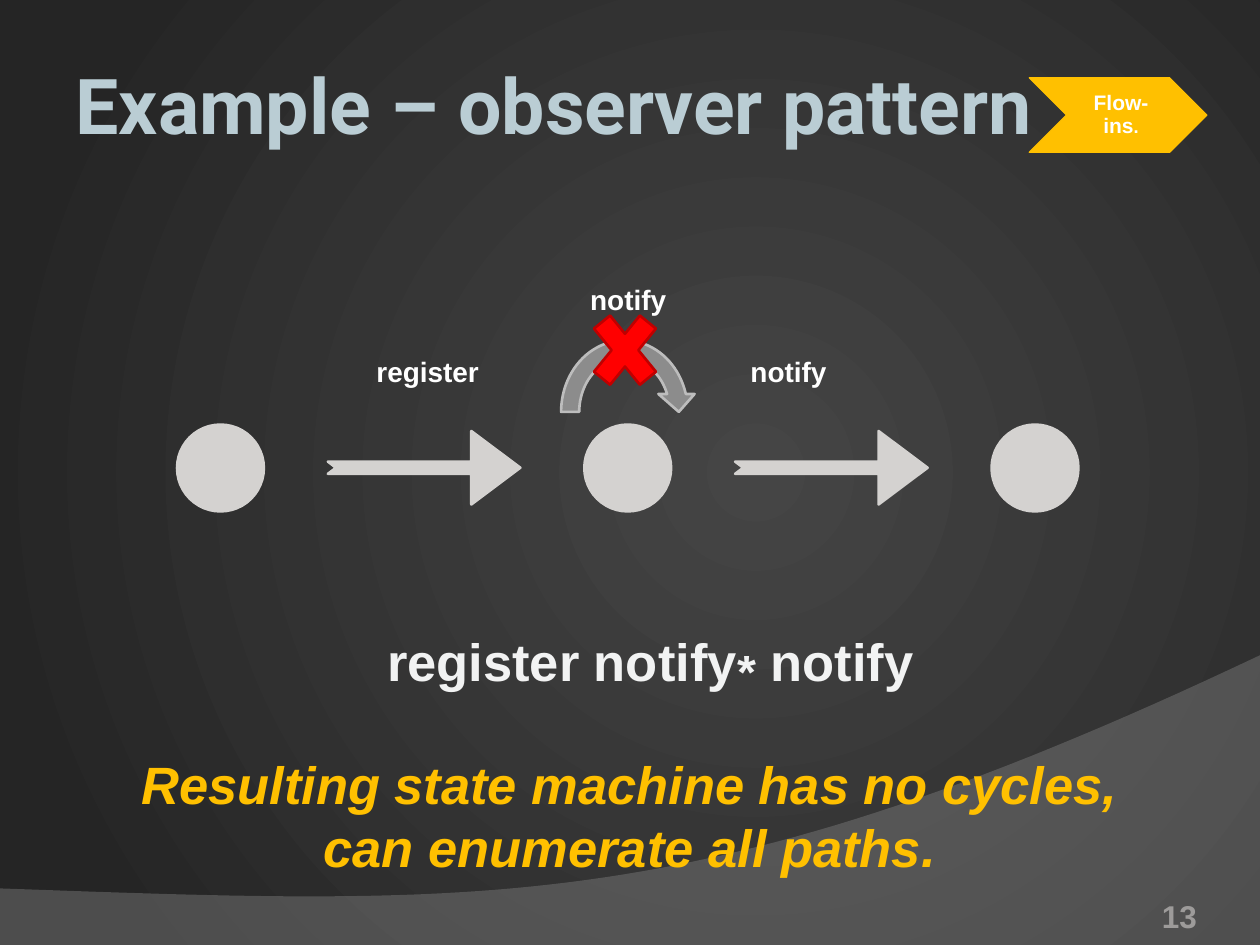
from dataclasses import dataclass

from lxml import etree
from pptx import Presentation
from pptx.dml.color import RGBColor
from pptx.enum.shapes import MSO_SHAPE
from pptx.enum.text import MSO_ANCHOR, MSO_AUTO_SIZE, PP_ALIGN
from pptx.oxml.ns import qn
from pptx.util import Cm, Pt

LEFT, CENTER, RIGHT = PP_ALIGN.LEFT, PP_ALIGN.CENTER, PP_ALIGN.RIGHT
TOP, MIDDLE, BOTTOM = MSO_ANCHOR.TOP, MSO_ANCHOR.MIDDLE, MSO_ANCHOR.BOTTOM
CIRCLE, ARROW = MSO_SHAPE.OVAL, MSO_SHAPE.NOTCHED_RIGHT_ARROW
LOOP, CROSS, CHEVRON = MSO_SHAPE.CIRCULAR_ARROW, MSO_SHAPE.MATH_MULTIPLY, MSO_SHAPE.CHEVRON

WIDTH, HEIGHT = 25.4, 19.05
WHITE, GOLD, STATE_GREY = "FFFFFF", "FFC000", "D4D2D0"
STATE_COUNT, STATE_STEP = 3, 8.21


@dataclass
class Box:
    left: float
    top: float
    width: float
    height: float

    def lengths(self):
        return [Cm(value) for value in (self.left, self.top, self.width, self.height)]


@dataclass
class Label:
    box: Box
    text: str
    size: float = 16
    color: str = WHITE
    align: PP_ALIGN = LEFT
    anchor: MSO_ANCHOR = TOP
    insets: tuple = (0.25, 0.13, 0.25, 0.13)
    italic: bool = False


def rgb(color: str) -> RGBColor:
    return RGBColor.from_string(color)


def set_alpha(element, percent: int) -> None:
    for color in element.iter(qn("a:srgbClr")):
        etree.SubElement(color, qn("a:alpha"), val=str(percent * 1000))


def format_run(run, size: float, color: str, font: str = "Arial", italic: bool = False) -> None:
    run.font.name = font
    run.font.size = Pt(size)
    run.font.bold = True
    run.font.italic = italic
    run.font.color.rgb = rgb(color)


def add_label(slide, label: Label):
    shape = slide.shapes.add_textbox(*label.box.lengths())
    frame = shape.text_frame
    frame.text = label.text
    frame.word_wrap = True
    frame.auto_size = MSO_AUTO_SIZE.NONE
    frame.vertical_anchor = label.anchor
    (frame.margin_left, frame.margin_top,
     frame.margin_right, frame.margin_bottom) = [Cm(inset) for inset in label.insets]
    for paragraph in frame.paragraphs:
        paragraph.alignment = label.align
        for run in paragraph.runs:
            format_run(run, label.size, label.color, italic=label.italic)
    return shape


def add_figure(slide, kind, box: Box, fill: str, line: str, line_width=1.5, adjustments=()):
    shape = slide.shapes.add_shape(kind, *box.lengths())
    shape.shadow.inherit = False
    shape.fill.solid()
    shape.fill.fore_color.rgb = rgb(fill)
    shape.line.color.rgb = rgb(line)
    shape.line.width = Pt(line_width)
    for index, value in enumerate(adjustments):
        shape.adjustments[index] = value
    return shape


def set_background(slide) -> None:
    """Radial gradient with its light centre right of the middle."""
    fill = slide.background.fill
    fill.gradient()
    for stop, color in zip(fill.gradient_stops, ("454545", "252525")):
        stop.color.rgb = rgb(color)
    gradient = slide.element.find(".//" + qn("a:gradFill"))
    linear = gradient.find(qn("a:lin"))
    radial = etree.Element(qn("a:path"), path="circle")
    etree.SubElement(radial, qn("a:fillToRect"), l="60000", t="50000", r="40000", b="50000")
    gradient.replace(linear, radial)


def add_wave(slide, steps: int = 60) -> None:
    """Translucent band whose upper edge is a sampled cubic curve."""
    controls = ((WIDTH, 13.21), (14.2, 18.52), (9.93, 18.26), (0, 17.91))

    def curve_point(t: float) -> tuple:
        weights = ((1 - t) ** 3, 3 * t * (1 - t) ** 2, 3 * t ** 2 * (1 - t), t ** 3)
        return tuple(Cm(sum(w * point[axis] for w, point in zip(weights, controls)))
                     for axis in (0, 1))

    builder = slide.shapes.build_freeform(0, Cm(HEIGHT))
    builder.add_line_segments([(Cm(WIDTH), Cm(HEIGHT))]
                              + [curve_point(step / steps) for step in range(steps + 1)])
    wave = builder.convert_to_shape()
    wave.shadow.inherit = False
    wave.fill.solid()
    wave.fill.fore_color.rgb = rgb("7F7F7F")
    set_alpha(wave.fill._xPr.find(qn("a:solidFill")), 45)
    wave.line.fill.background()


def set_title(slide) -> None:
    title = slide.shapes.title
    title.left, title.top, title.width, title.height = Box(1.27, 1.04, 22.86, 3.18).lengths()
    frame = title.text_frame
    frame.text = "Example – observer pattern"
    frame.vertical_anchor = TOP
    frame.auto_size = MSO_AUTO_SIZE.NONE
    paragraph = frame.paragraphs[0]
    paragraph.alignment = LEFT
    format_run(paragraph.runs[0], 44, "BACDD4", "Roboto")


def add_state_machine(slide) -> None:
    for index in range(STATE_COUNT):
        offset = index * STATE_STEP
        add_figure(slide, CIRCLE, Box(3.57 + offset, 8.56, 1.75, 1.75), STATE_GREY, STATE_GREY)
        if index < STATE_COUNT - 1:
            add_figure(slide, ARROW, Box(6.61 + offset, 8.69, 3.88, 1.48),
                       STATE_GREY, STATE_GREY, adjustments=(0.167, 0.667))
    add_figure(slide, LOOP, Box(11.13, 6.68, 2.92, 3.25), "8C8C8C", "BDBDBD",
               adjustments=(0.125, 11.423, 204.577, 108, 0.125))
    for label in (Label(Box(7.34, 7.01, 3.94, 0.94), "register"),
                  Label(Box(14.88, 7.01, 3.94, 0.94), "notify"),
                  Label(Box(9.4, 5.56, 6.53, 0.94), "notify", align=CENTER)):
        add_label(slide, label)
    add_figure(slide, CROSS, Box(11.71, 5.97, 1.78, 2.18), "FF0000", "C00000",
               adjustments=(0.235,))


def add_formula(slide) -> None:
    color = "FCFDFD"
    shape = add_label(slide, Label(Box(6.76, 11.91, 12.7, 1.63), "register notify",
                                   30, color, CENTER))
    paragraph = shape.text_frame.paragraphs[0]
    for text, size in (("*", 48), (" notify", 30)):
        run = paragraph.add_run()
        run.text = text
        format_run(run, size, color)
    paragraph.runs[1].font._element.set("baseline", "-10000")
    set_alpha(shape.text_frame._txBody, 95)


def add_step_marker(slide) -> None:
    chevron = add_figure(slide, CHEVRON, Box(20.75, 1.57, 3.58, 1.5), GOLD, GOLD, 0.75)
    caption = add_label(slide, Label(Box(21.51, 1.57, 2.06, 1.5), "Flow-ins", 12, align=CENTER,
                                     anchor=MIDDLE, insets=(0.2, 0.08, 0.08, 0.08)))
    paragraph = caption.text_frame.paragraphs[0]
    paragraph.line_spacing = 0.9
    period = paragraph.add_run()
    period.text = "."
    format_run(period, 10.5, WHITE)
    slide.shapes.add_group_shape([chevron, caption])


def main() -> None:
    presentation = Presentation()
    presentation.slide_width, presentation.slide_height = Cm(WIDTH), Cm(HEIGHT)
    slide = presentation.slides.add_slide(presentation.slide_layouts[5])
    set_background(slide)
    add_wave(slide)
    set_title(slide)
    add_state_machine(slide)
    add_formula(slide)
    add_label(slide, Label(Box(0, 15.04, WIDTH, 2.82),
                           "Resulting state machine has no cycles,\ncan enumerate all paths.",
                           30, GOLD, CENTER, italic=True))
    add_step_marker(slide)
    add_label(slide, Label(Box(22.02, 17.83, 2.11, 1.02), "13", 18, "9D9B9A",
                           RIGHT, BOTTOM, (0, 0, 0, 0)))
    presentation.save("out.pptx")


if __name__ == "__main__":
    main()
